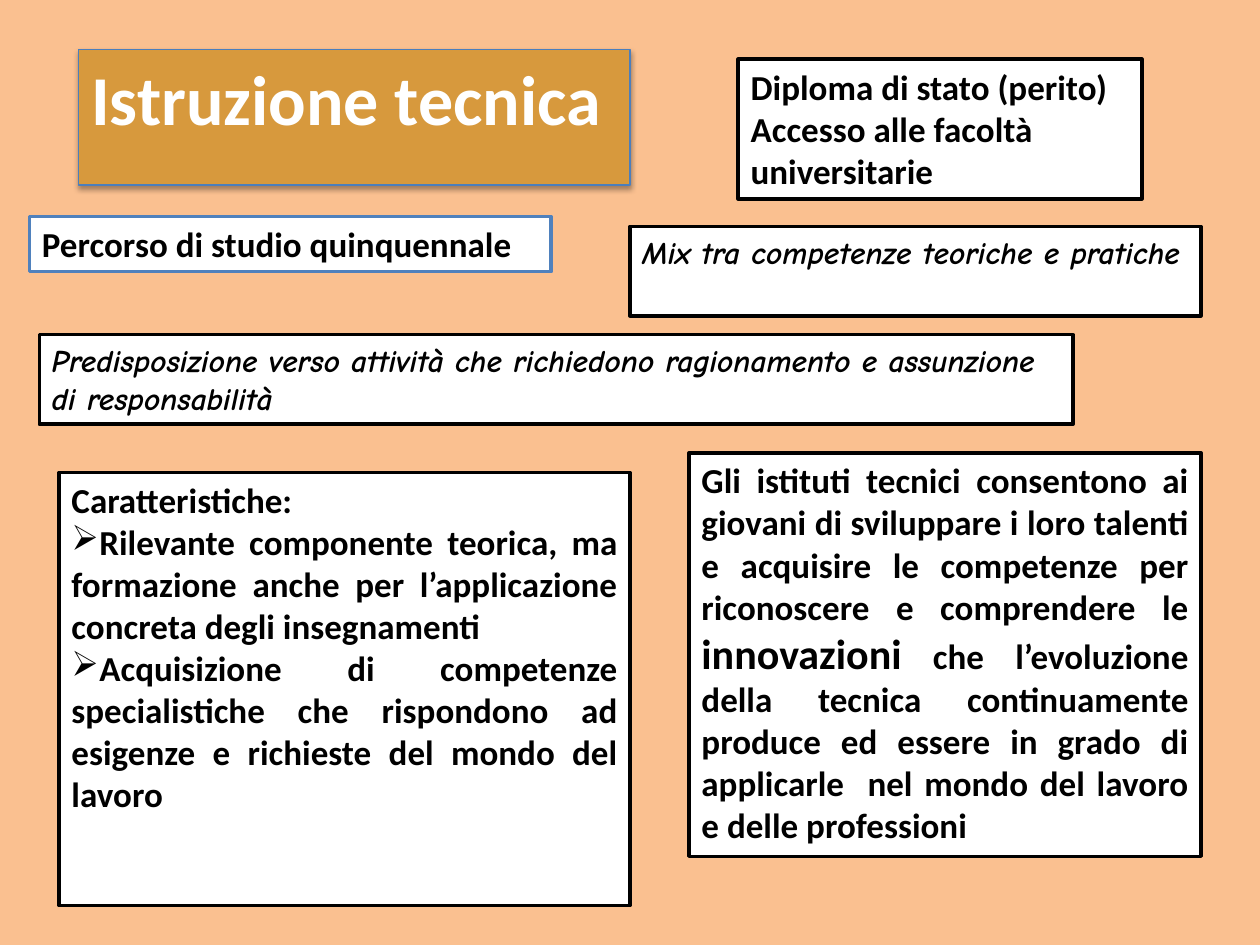
from lxml import etree
from pptx import Presentation
from pptx import util as u
from pptx.dml.color import RGBColor
from pptx.enum import text
from pptx.oxml import ns

PEACH = RGBColor(0xFA, 0xC0, 0x90)
OCHRE = RGBColor(0xD7, 0x99, 0x3D)
STEEL = RGBColor(0x4B, 0x7E, 0xBC)
BLUE = RGBColor(0x4F, 0x81, 0xBD)
BLACK = RGBColor(0, 0, 0)
WHITE = RGBColor(0xFF, 0xFF, 0xFF)

WIDTH, HEIGHT = u.Inches(10), u.Inches(7.5)
UNIT = WIDTH / 64
BULLET = "➢"

HEADING = {"name": "Calibri", "size": u.Pt(40), "bold": True, "italic": False}
PLAIN = {**HEADING, "size": u.Pt(20)}
LARGE = {**PLAIN, "size": u.Pt(24)}
SLANTED = {"name": "Comic Neue", "size": u.Pt(18), "bold": True, "italic": True}


def set_values(target, values):
    for name, value in values.items():
        setattr(target, name, value)


def place(box, column, row, columns, rows):
    edges = {"left": column, "top": row, "width": columns, "height": rows}
    set_values(box, {name: round(count * UNIT) for name, count in edges.items()})


def paint(box, fill, line, weight):
    box.fill.solid()
    box.fill.fore_color.rgb = fill
    box.line.color.rgb = line
    box.line.width = u.Pt(weight)


def add_bullet(para):
    props = para._p.get_or_add_pPr()
    set_margins = {"marL": "0", "indent": "0"}
    for name, value in set_margins.items():
        props.set(name, value)
    etree.SubElement(props, ns.qn("a:buChar")).set("char", BULLET)


def write(box, paragraphs, color, align=text.PP_ALIGN.LEFT):
    frame = box.text_frame
    set_values(frame, {
        "word_wrap": True,
        "auto_size": text.MSO_AUTO_SIZE.NONE,
        "vertical_anchor": text.MSO_ANCHOR.TOP,
    })
    for index, (spans, bulleted) in enumerate(paragraphs):
        para = frame.add_paragraph() if index else frame.paragraphs[0]
        para.alignment = align
        if bulleted:
            add_bullet(para)
        for words, style in spans:
            span = para.add_run()
            span.text = words
            set_values(span.font, style)
            span.font.color.rgb = color


def add_soft_shadow(box):
    effects = etree.SubElement(box._element.spPr, ns.qn("a:effectLst"))
    shadow = etree.SubElement(effects, ns.qn("a:outerShdw"), {
        "blurRad": str(u.Pt(3.1)), "dist": str(u.Pt(1.8)),
        "dir": "5400000", "rotWithShape": "0",
    })
    color = etree.SubElement(shadow, ns.qn("a:srgbClr"), val="000000")
    etree.SubElement(color, ns.qn("a:alpha"), val="35000")


def add_title(page, words, area):
    title = page.shapes.title
    place(title, *area)
    paint(title, OCHRE, STEEL, 0.75)
    add_soft_shadow(title)
    write(title, [([(words, HEADING)], False)], WHITE)


def add_card(page, area, paragraphs, line=BLACK, align=text.PP_ALIGN.LEFT):
    box = page.shapes.add_textbox(0, 0, 0, 0)
    place(box, *area)
    paint(box, WHITE, line, 2)
    write(box, paragraphs, BLACK, align)


def lines(style, *sentences):
    return [([(sentence, style)], False) for sentence in sentences]


def bullets(style, *sentences):
    return [([(sentence, style)], True) for sentence in sentences]


def main():
    deck = Presentation()
    set_values(deck, {"slide_width": WIDTH, "slide_height": HEIGHT})
    page = deck.slides.add_slide(deck.slide_layouts[5])
    page.background.fill.solid()
    page.background.fill.fore_color.rgb = PEACH
    justified = text.PP_ALIGN.JUSTIFY

    add_title(page, "Istruzione tecnica", (4, 2.5, 28, 6.9))
    add_card(page, (1.5, 11, 26.5, 2.8),
             lines(PLAIN, "Percorso di studio quinquennale"), line=BLUE)
    add_card(page, (37.5, 3, 20.5, 7.1),
             lines(PLAIN, "Diploma di stato (perito)",
                   "Accesso alle facoltà universitarie"))
    features = lines(PLAIN, "Caratteristiche:") + bullets(
        PLAIN,
        "Rilevante componente teorica, ma formazione anche per "
        "l’applicazione concreta degli insegnamenti",
        "Acquisizione di competenze specialistiche che rispondono ad "
        "esigenze e richieste del mondo del lavoro")
    add_card(page, (3, 24, 29, 22), features, align=justified)
    add_card(page, (2, 17, 52.5, 4.55),
             lines(SLANTED, "Predisposizione verso attività che richiedono "
                   "ragionamento e assunzione di responsabilità"))
    add_card(page, (32, 11.5, 29, 4.55),
             lines(SLANTED, "Mix tra competenze teoriche e pratiche"))
    purpose = [
        ("Gli istituti tecnici consentono ai giovani di sviluppare i loro "
         "talenti e acquisire le competenze per riconoscere e comprendere le ",
         PLAIN),
        ("innovazioni", LARGE),
        (" che l’evoluzione della tecnica continuamente produce ed essere in "
         "grado di applicarle  nel mondo del lavoro e delle professioni", PLAIN),
    ]
    add_card(page, (35, 23, 26, 20.5), [(purpose, False)], align=justified)
    deck.save("out.pptx")


if __name__ == "__main__":
    main()
